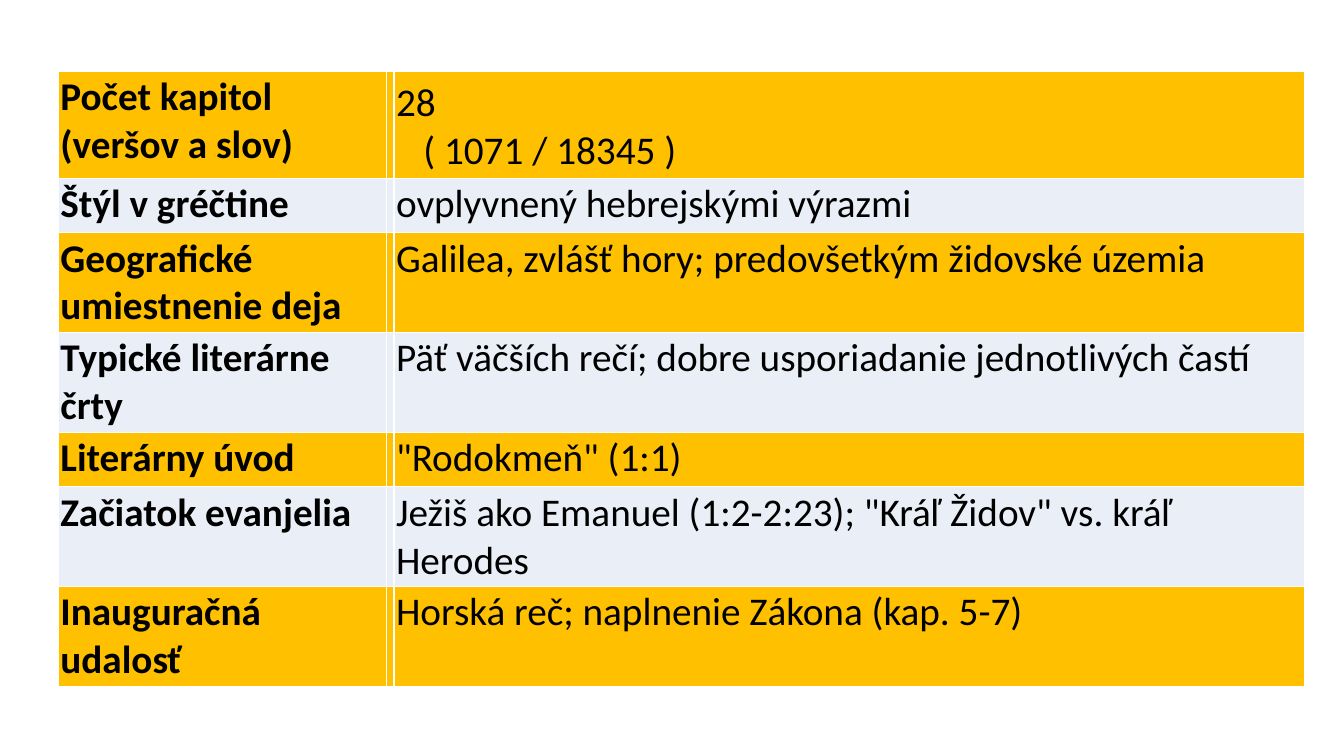
from pptx import Presentation
from pptx.dml.color import RGBColor
from pptx.util import Inches, Pt

WIDE, HIGH = 13.33, 7.5
LEFT, TOP = 0.58, 0.71
COLS = (3.25, 0.07, 9.03)
INSET = 0.02
SHORT, TALL = 0.54, 0.99
FILLS = ("FFC000", "EAEFF7")
FONT = {"name": "Calibri", "size": Pt(28)}
ROWS = (
    (1.06, ("Počet kapitol", "(veršov a slov)"), ("28", "( 1071 / 18345 )")),
    (SHORT, ("Štýl v gréčtine",), ("ovplyvnený hebrejskými výrazmi",)),
    (TALL, ("Geografické umiestnenie deja",),
     ("Galilea, zvlášť hory; predovšetkým židovské územia",)),
    (TALL, ("Typické literárne črty",),
     ("Päť väčších rečí; dobre usporiadanie jednotlivých častí",)),
    (SHORT, ("Literárny úvod",), ('"Rodokmeň" (1:1)',)),
    (TALL, ("Začiatok evanjelia",),
     ('Ježiš ako Emanuel (1:2-2:23); "Kráľ Židov" vs. kráľ Herodes',)),
    (TALL, ("Inauguračná udalosť",),
     ("Horská reč; naplnenie Zákona (kap. 5-7)",)),
)


def color(form, code):
    """Give a fill or font color format a hex color."""
    form.rgb = RGBColor.from_string(code)


def assign(item, values):
    """Set each attribute named in a dict."""
    for name, value in values.items():
        setattr(item, name, value)


def write(cell, lines, code, bold=False):
    """Fill a cell and write one paragraph per line."""
    cell.fill.solid()
    color(cell.fill.fore_color, code)
    sides = ("left", "right", "top", "bottom")
    assign(cell, {f"margin_{side}": Inches(INSET) for side in sides})
    frame = cell.text_frame
    frame.text = "\n".join(lines)
    for para in frame.paragraphs:
        assign(para.font, {**FONT, "bold": bold})
        color(para.font.color, "000000")
        for run in para.runs:
            assign(run.font, {**FONT, "bold": bold})
            color(run.font.color, "000000")


def indent(cell):
    """Lower the chapter count and indent the verse count below it."""
    cell.margin_top = Inches(0.08)
    last = cell.text_frame.paragraphs[-1]
    last._p.get_or_add_pPr().set("marL", str(Inches(0.27)))


def grid(slide):
    """Add the table of gospel facts."""
    high = sum(row[0] for row in ROWS)
    frame = slide.shapes.add_table(
        len(ROWS), len(COLS), Inches(LEFT), Inches(TOP),
        Inches(sum(COLS)), Inches(high))
    table = frame.table
    assign(table, {"first_row": False, "horz_banding": False})
    for col, width in zip(table.columns, COLS):
        col.width = Inches(width)
    for index, (height, label, fact) in enumerate(ROWS):
        table.rows[index].height = Inches(height)
        code = FILLS[index % len(FILLS)]
        write(table.cell(index, 0), label, code, bold=True)
        write(table.cell(index, 1), (), code)
        write(table.cell(index, 2), fact, code)
    indent(table.cell(0, 2))


def main():
    """Build and save the slide."""
    deck = Presentation()
    assign(deck, {"slide_width": Inches(WIDE), "slide_height": Inches(HIGH)})
    grid(deck.slides.add_slide(deck.slide_layouts[6]))
    deck.save("out.pptx")


if __name__ == "__main__":
    main()
